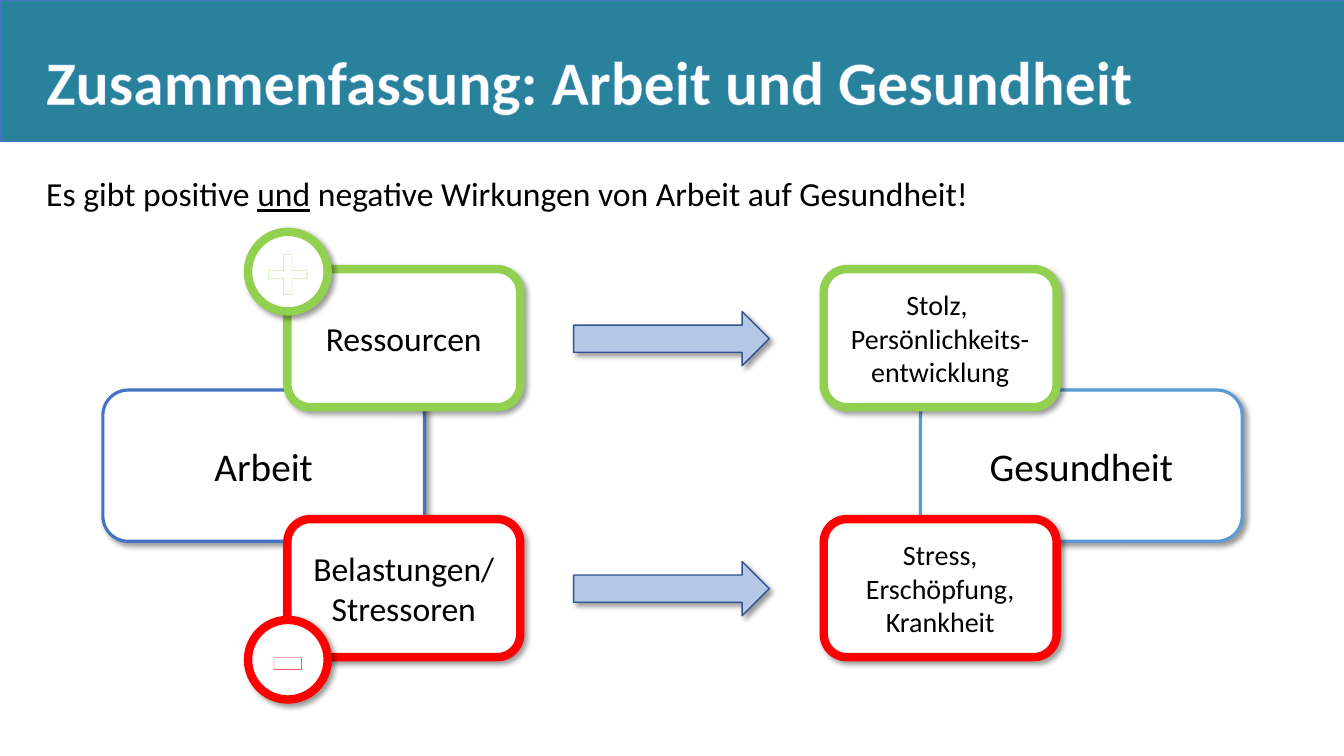
from dataclasses import dataclass

from lxml import etree
from pptx import Presentation
from pptx import util as u
from pptx.dml.color import RGBColor
from pptx.enum import shapes, text
from pptx.oxml import ns

PX = 9144  # EMU per px, 100 px to the inch


@dataclass(frozen=True)
class Theme:
    font: str = "Calibri"
    white: str = "FFFFFF"
    black: str = "000000"
    header: str = "29829C"
    blue: str = "4472C4"
    sky: str = "5B9BD5"
    good: str = "92D050"
    bad: str = "FF0000"
    arrow: str = "B4C7E7"
    arrow_edge: str = "325491"
    title: int = 44
    topic: int = 28
    body: int = 24
    effect: int = 20
    plus: int = 60
    minus: int = 80


THEME = Theme()
Kind = shapes.MSO_SHAPE


@dataclass(frozen=True)
class Span:
    words: str
    size: int
    color: str = THEME.black
    bold: bool = False
    underline: bool = False
    outline: str = ""
    outline_pt: float = 1.25


@dataclass(frozen=True)
class Node:
    kind: Kind
    left: int
    top: int
    width: int
    height: int
    edge: str
    edge_pt: float
    fill: str = THEME.white
    paras: tuple[tuple[Span, ...], ...] = ()
    badge_bottom: int | None = None  # bottom inset of a badge; its other insets are 0
    shadow: bool = True


def write(frame, paras: tuple[tuple[Span, ...], ...], align) -> None:
    for index, spans in enumerate(paras):
        para = frame.paragraphs[0] if index == 0 else frame.add_paragraph()
        para.alignment = align
        for item in spans:
            span = para.add_run()
            span.text = item.words
            font = span.font
            font.name, font.size = THEME.font, u.Pt(item.size)
            font.bold, font.underline = item.bold, item.underline
            font.color.rgb = RGBColor.from_string(item.color)
            if item.outline:
                line = etree.Element(ns.qn("a:ln"), w=str(u.Pt(item.outline_pt)))
                fill = etree.SubElement(line, ns.qn("a:solidFill"))
                etree.SubElement(fill, ns.qn("a:srgbClr"), val=item.outline)
                span._r.get_or_add_rPr().insert(0, line)


def add_shadow(shape) -> None:
    effects = shape._element.spPr.find(ns.qn("a:effectLst"))
    outer = etree.SubElement(
        effects, ns.qn("a:outerShdw"), blurRad=str(u.Pt(4)), dist=str(u.Pt(3)),
        dir=str(45 * 60000), algn="tl", rotWithShape="0")
    color = etree.SubElement(outer, ns.qn("a:srgbClr"), val=THEME.black)
    etree.SubElement(color, ns.qn("a:alpha"), val="40000")


def draw_node(page, node: Node) -> None:
    box = page.shapes.add_shape(
        node.kind, *(n * PX for n in (node.left, node.top, node.width, node.height)))
    box.shadow.inherit = False
    if node.shadow:
        add_shadow(box)
    box.fill.solid()
    box.fill.fore_color.rgb = RGBColor.from_string(node.fill)
    box.line.color.rgb = RGBColor.from_string(node.edge)
    box.line.width = u.Pt(node.edge_pt)
    frame = box.text_frame
    frame.word_wrap = True
    frame.vertical_anchor = text.MSO_ANCHOR.MIDDLE
    if node.badge_bottom is not None:
        frame.margin_left = frame.margin_right = frame.margin_top = 0
        frame.margin_bottom = node.badge_bottom * PX
    write(frame, node.paras, text.PP_ALIGN.CENTER)


def draw_text(page, top: int, width: int, height: int, spans: tuple[Span, ...]) -> None:
    box = page.shapes.add_textbox(36 * PX, top * PX, width * PX, height * PX)
    box.text_frame.word_wrap = False
    box.text_frame.auto_size = text.MSO_AUTO_SIZE.SHAPE_TO_FIT_TEXT
    write(box.text_frame, (spans,), text.PP_ALIGN.LEFT)


def topic(left: int, edge: str, words: str) -> Node:
    return Node(Kind.ROUNDED_RECTANGLE, left, 387, 319, 150, edge, 2.25,
                paras=((Span(words, THEME.topic),),))


def card(left: int, top: int, edge: str, size: int, *lines: str) -> Node:
    return Node(Kind.ROUNDED_RECTANGLE, left, top, 231, 137, edge, 6,
                paras=tuple((Span(line, size),) for line in lines))


def arrow(row_top: int) -> Node:
    return Node(Kind.RIGHT_ARROW, 569, row_top + 42, 194, 54, THEME.arrow_edge, 1, THEME.arrow)


def badge(top: int, edge: str, sign: str, size: int, bottom: int) -> Node:
    mark = Span(sign, size, THEME.white, bold=True, outline=edge)
    return Node(Kind.OVAL, 246, top, 79, 79, edge, 6, paras=((mark,),), badge_bottom=bottom)


CAUSE, EFFECT = 285, 817  # left edges of the card columns
UPPER, LOWER = 267, 515  # top edges of the card rows

NODES = (
    topic(102, THEME.blue, "Arbeit"),
    topic(913, THEME.sky, "Gesundheit"),
    card(CAUSE, UPPER, THEME.good, THEME.body, "Ressourcen"),
    card(EFFECT, UPPER, THEME.good, THEME.effect, "Stolz, ", "Persönlichkeits-entwicklung"),
    card(CAUSE, LOWER, THEME.bad, THEME.body, "Belastungen/ Stressoren"),
    card(EFFECT, LOWER, THEME.bad, THEME.effect, "Stress, Erschöpfung, Krankheit"),
    arrow(UPPER),
    arrow(LOWER),
    badge(230, THEME.good, "+", THEME.plus, 8),
    badge(615, THEME.bad, "-", THEME.minus, 18),
)


def main() -> None:
    deck = Presentation()
    deck.slide_width, deck.slide_height = u.Inches(13.33), u.Inches(7.5)
    page = deck.slides.add_slide(deck.slide_layouts[6])

    # Header band and title
    draw_node(page, Node(Kind.RECTANGLE, 0, 0, 1333, 140, THEME.blue, 0.5,
                         THEME.header, shadow=False))
    draw_text(page, 38, 1109, 84, (
        Span("Zusammenfassung: Arbeit und Gesundheit", THEME.title, THEME.white,
             bold=True, outline=THEME.sky, outline_pt=0.8),))

    # Diagram, from back to front
    for node in NODES:
        draw_node(page, node)

    # Key statement
    draw_text(page, 167, 944, 50, (
        Span("Es gibt positive ", THEME.body),
        Span("und", THEME.body, underline=True),
        Span(" negative Wirkungen von Arbeit auf Gesundheit!", THEME.body)))

    deck.save("out.pptx")


if __name__ == "__main__":
    main()
